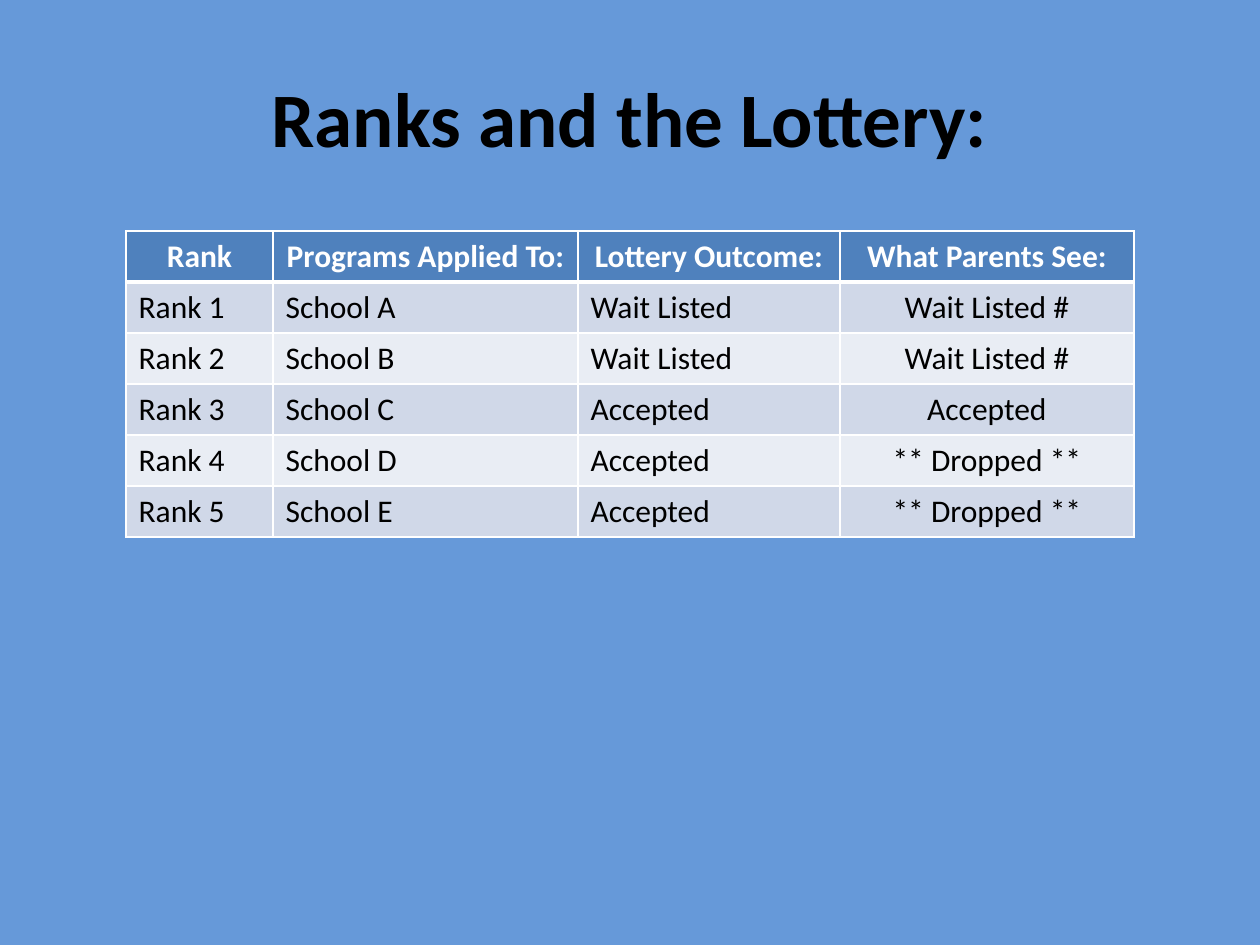
from dataclasses import dataclass

from lxml.etree import SubElement
from pptx import Presentation
from pptx.dml.color import RGBColor
from pptx.enum.text import MSO_ANCHOR, PP_ALIGN
from pptx.oxml.ns import qn
from pptx.slide import Slide
from pptx.table import _Cell
from pptx.util import Emu, Pt

EMU_PER_PX = 914400 // 126
FONT = "Calibri"
BACKGROUND = "6699D9"
BLACK = "000000"
WHITE = "FFFFFF"
HEADER_FILL = "4F81BD"
BAND_FILLS = ("D0D8E8", "E9EDF4")
ROW_HEIGHT = 51
THIN, THICK = 1, 3


@dataclass(frozen=True)
class Column:
    heading: str
    width: int
    align: PP_ALIGN
    entries: tuple[str, ...]


COLUMNS = (
    Column("Rank", 147, PP_ALIGN.LEFT, tuple(f"Rank {n}" for n in range(1, 6))),
    Column("Programs Applied To:", 305, PP_ALIGN.LEFT,
           tuple(f"School {letter}" for letter in "ABCDE")),
    Column("Lottery Outcome:", 262, PP_ALIGN.LEFT,
           ("Wait Listed",) * 2 + ("Accepted",) * 3),
    Column("What Parents See:", 294, PP_ALIGN.CENTER,
           ("Wait Listed #",) * 2 + ("Accepted",) + ("** Dropped **",) * 2),
)


def px(length: int) -> Emu:
    return Emu(length * EMU_PER_PX)


def color(value: str) -> RGBColor:
    return RGBColor.from_string(value)


def write(frame, text: str, size: int, ink: str, bold: bool, align: PP_ALIGN) -> None:
    paragraph = frame.paragraphs[0]
    paragraph.text = text
    paragraph.alignment = align
    paragraph.font.name = FONT
    paragraph.font.size = Pt(size)
    paragraph.font.bold = bold
    paragraph.font.color.rgb = color(ink)


def add_borders(cell: _Cell, top: int, bottom: int) -> None:
    """Draw white borders; must run before the cell's fill is set."""
    properties = cell._tc.get_or_add_tcPr()
    for side, width in (("L", THIN), ("R", THIN), ("T", top), ("B", bottom)):
        line = SubElement(properties, qn(f"a:ln{side}"), w=str(Pt(width)))
        SubElement(SubElement(line, qn("a:solidFill")), qn("a:srgbClr"), val=WHITE)


def add_title(slide: Slide, text: str) -> None:
    frame = slide.shapes.add_textbox(px(63), px(38), px(1134), px(157)).text_frame
    frame.word_wrap = True
    frame.vertical_anchor = MSO_ANCHOR.MIDDLE
    write(frame, text, 44, BLACK, True, PP_ALIGN.CENTER)


def add_lottery_table(slide: Slide, columns: tuple[Column, ...]) -> None:
    row_count = 1 + len(columns[0].entries)
    table_width = sum(column.width for column in columns)
    table = slide.shapes.add_table(
        row_count, len(columns), px(126), px(231),
        px(table_width), px(row_count * ROW_HEIGHT)).table
    for row in table.rows:
        row.height = px(ROW_HEIGHT)
    for column_index, column in enumerate(columns):
        table.columns[column_index].width = px(column.width)
        for row_index, text in enumerate((column.heading, *column.entries)):
            cell = table.cell(row_index, column_index)
            is_header = row_index == 0
            add_borders(cell, THICK if row_index == 1 else THIN,
                        THICK if is_header else THIN)
            cell.fill.solid()
            cell.fill.fore_color.rgb = color(
                HEADER_FILL if is_header else BAND_FILLS[(row_index - 1) % 2])
            write(cell.text_frame, text, 18, WHITE if is_header else BLACK,
                  is_header, PP_ALIGN.CENTER if is_header else column.align)


def main() -> None:
    presentation = Presentation()
    presentation.slide_width = px(1260)
    presentation.slide_height = px(945)
    slide = presentation.slides.add_slide(presentation.slide_layouts[6])
    slide.background.fill.solid()
    slide.background.fill.fore_color.rgb = color(BACKGROUND)
    add_title(slide, "Ranks and the Lottery:")
    add_lottery_table(slide, COLUMNS)
    presentation.save("out.pptx")


if __name__ == "__main__":
    main()
